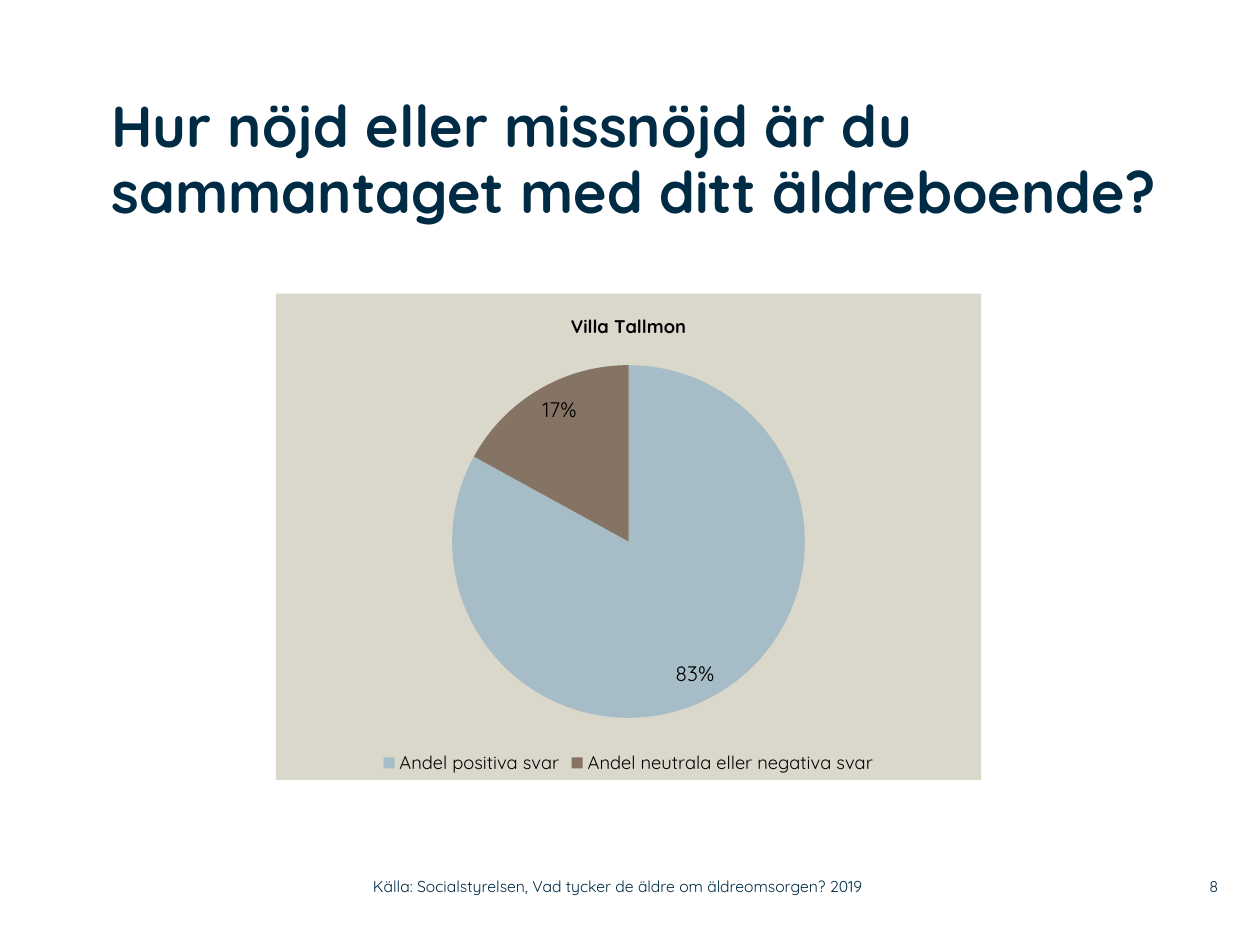
from lxml import etree
from pptx import Presentation
from pptx.chart.data import CategoryChartData
from pptx.dml.color import RGBColor
from pptx.enum.chart import XL_CHART_TYPE, XL_LABEL_POSITION, XL_LEGEND_POSITION
from pptx.enum.text import MSO_ANCHOR, PP_ALIGN
from pptx.oxml import parse_xml
from pptx.oxml.ns import nsdecls, qn
from pptx.util import Cm, Pt

FONT = "Quicksand"
COLORS = {
    "navy": "002B45",
    "black": "000000",
    "panel": "DAD7CB",
    "positive": "A6BCC6",
    "negative": "857363",
}


def color(name):
    return RGBColor.from_string(COLORS[name])


def add_text(slide, box, text, size, align=PP_ALIGN.LEFT, anchor=MSO_ANCHOR.MIDDLE, bold=False):
    frame = slide.shapes.add_textbox(*(Cm(length) for length in box)).text_frame
    frame.word_wrap = True
    frame.vertical_anchor = anchor
    frame.margin_left = frame.margin_right = frame.margin_top = frame.margin_bottom = 0
    frame.text = text
    paragraph = frame.paragraphs[0]
    paragraph.alignment = align
    for run in paragraph.runs:
        run.font.name = FONT
        run.font.size = Pt(size)
        run.font.bold = bold
        run.font.color.rgb = color("navy")
    return paragraph


prs = Presentation()
prs.slide_width = Cm(25.4)
prs.slide_height = Cm(19.05)
slide = prs.slides.add_slide(prs.slide_layouts[6])

# Question
question = add_text(
    slide, (2.24, 1.9, 22.43, 3.61),
    "Hur nöjd eller missnöjd är du sammantaget med ditt äldreboende?",
    33, anchor=MSO_ANCHOR.TOP, bold=True,
)
question.line_spacing = 0.96

# Pie of answers
answers = CategoryChartData()
answers.categories = ["Andel positiva svar", "Andel neutrala eller negativa svar"]
answers.add_series("Series 1", (83, 17))
chart = slide.shapes.add_chart(
    XL_CHART_TYPE.PIE, Cm(5.56), Cm(5.92), Cm(14.22), Cm(9.8), answers
).chart
chart.font.name = FONT
chart.font.size = Pt(18)
chart.font.color.rgb = color("black")

chart.has_title = True
chart.chart_title.include_in_layout = False
chart.chart_title.text_frame.text = "Villa Tallmon"
home_font = chart.chart_title.text_frame.paragraphs[0].runs[0].font
home_font.name = FONT
home_font.size = Pt(10.5)
home_font.bold = True
home_font.color.rgb = color("black")

chart.has_legend = True
chart.legend.position = XL_LEGEND_POSITION.BOTTOM
chart.legend.include_in_layout = False
chart.legend.font.name = FONT
chart.legend.font.size = Pt(10.5)
chart.legend.font.color.rgb = color("black")

pie = chart.plots[0]
pie.vary_by_categories = True
for index, answer in enumerate(("positive", "negative")):
    slice_format = pie.series[0].points[index].format
    slice_format.fill.solid()
    slice_format.fill.fore_color.rgb = color(answer)
    slice_format.line.fill.background()

pie.has_data_labels = True
shares = pie.data_labels
shares.show_percentage = True
shares.show_value = False
shares.number_format = "0%"
shares.number_format_is_linked = False
shares.position = XL_LABEL_POSITION.INSIDE_END
shares.font.name = FONT
shares.font.size = Pt(12)
shares.font.color.rgb = color("black")

# Pie placement inside the panel, as fractions of it
plot_area = chart.element.find(qn("c:chart")).find(qn("c:plotArea"))
for old_layout in plot_area.findall(qn("c:layout")):
    plot_area.remove(old_layout)
layout = parse_xml(f"<c:layout {nsdecls('c')}/>")
manual = etree.SubElement(layout, qn("c:manualLayout"))
for tag, value in (
    ("layoutTarget", "inner"), ("xMode", "edge"), ("yMode", "edge"),
    ("x", "0.25"), ("y", "0.14"), ("w", "0.5"), ("h", "0.74"),
):
    etree.SubElement(manual, qn(f"c:{tag}")).set("val", value)
plot_area.insert(0, layout)

# Panel colour behind the chart
panel = parse_xml(
    f"<c:spPr {nsdecls('c', 'a')}><a:solidFill><a:srgbClr val=\"{COLORS['panel']}\"/></a:solidFill>"
    "<a:ln><a:noFill/></a:ln></c:spPr>"
)
chart.element.find(qn("c:chart")).addnext(panel)

# Source and page number
add_text(
    slide, (7.52, 17.5, 11.25, 0.74),
    "Källa: Socialstyrelsen, Vad tycker de äldre om äldreomsorgen? 2019", 9,
)
add_text(slide, (23.37, 17.5, 1.19, 0.74), "8", 9, align=PP_ALIGN.RIGHT)

prs.save("out.pptx")
